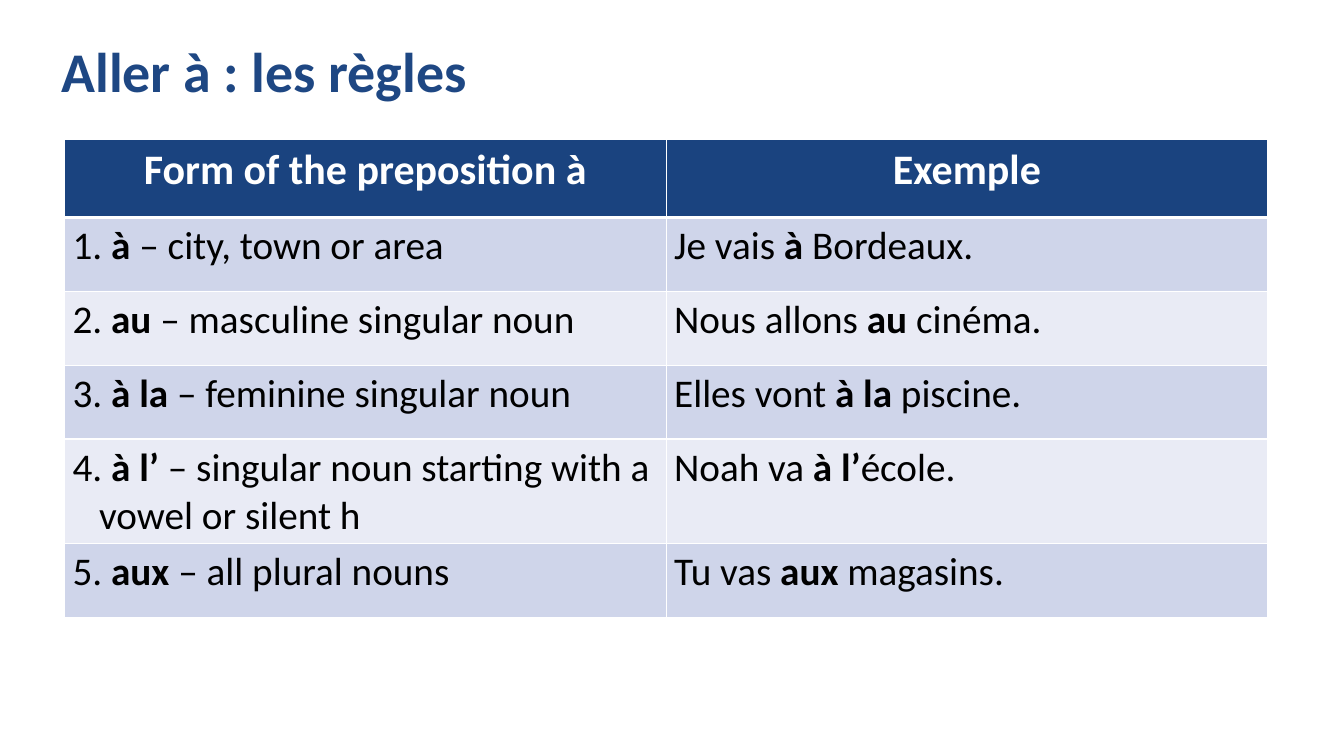
from dataclasses import dataclass

from lxml.etree import SubElement
from pptx import Presentation
from pptx.dml.color import RGBColor
from pptx.enum.text import MSO_ANCHOR, PP_ALIGN
from pptx.oxml.ns import qn
from pptx.util import Cm, Pt

FONT = "Calibri"
COLOURS = {
    "title": "1E4783",
    "header": "1A437F",
    "odd": "CFD5EA",
    "even": "E9EBF5",
    "text": "000000",
    "white": "FFFFFF",
}


@dataclass
class Rule:
    form: str
    use: str
    subject: str
    place: str


HEADINGS = ["Form of the preposition à", "Exemple"]
RULES = [
    Rule("à", "city, town or area", "Je vais", " Bordeaux."),
    Rule("au", "masculine singular noun", "Nous allons", " cinéma."),
    Rule("à la", "feminine singular noun", "Elles vont", " piscine."),
    Rule("à l’", "singular noun starting with a vowel or silent h", "Noah va", "école."),
    Rule("aux", "all plural nouns", "Tu vas", " magasins."),
]


def colour(name: str) -> RGBColor:
    return RGBColor.from_string(COLOURS[name])


def style(para, size: int, colour_name: str, bold: bool = False) -> None:
    font = para.font
    font.name, font.size, font.bold = FONT, Pt(size), bold
    font.color.rgb = colour(colour_name)


def add_border(cell, side: str, width: int) -> None:
    line = SubElement(cell._tc.get_or_add_tcPr(), qn(f"a:ln{side}"), w=str(Pt(width)))
    fill = SubElement(line, qn("a:solidFill"))
    SubElement(fill, qn("a:srgbClr"), val=COLOURS["white"])


def format_cell(cell, fill: str, top: int = 1, bottom: int = 1) -> None:
    cell.margin_left = cell.margin_right = Cm(0.2)
    cell.margin_top = cell.margin_bottom = Cm(0.13)
    for side, width in {"L": 1, "R": 1, "T": top, "B": bottom}.items():
        add_border(cell, side, width)
    cell.fill.solid()
    cell.fill.fore_color.rgb = colour(fill)


def write_rule(cell, before: str, form: str, after: str):
    para = cell.text_frame.paragraphs[0]
    for text in (before, form, after):
        span = para.add_run()
        span.text = text
        if text == form:
            span.font.bold = True
    style(para, 28, "text")
    return para


def add_title(page, text: str) -> None:
    box = page.shapes.add_textbox(Cm(1.3), Cm(1.02), Cm(29.21), Cm(1.73))
    frame = box.text_frame
    frame.word_wrap = True
    frame.vertical_anchor = MSO_ANCHOR.MIDDLE
    para = frame.paragraphs[0]
    para.text = text
    para.line_spacing = 0.9
    style(para, 40, "title", bold=True)


def add_rules_table(page) -> None:
    header_height, row_height = Cm(1.97), Cm(1.86)
    table = page.shapes.add_table(
        len(RULES) + 1, len(HEADINGS), Cm(1.63), Cm(3.51),
        Cm(30.32), header_height + row_height * len(RULES),
    ).table
    table.first_row = table.horz_banding = False

    # Header row
    table.rows[0].height = header_height
    for cell, heading in zip(table.rows[0].cells, HEADINGS):
        format_cell(cell, "header", bottom=3)
        para = cell.text_frame.paragraphs[0]
        para.text = heading
        para.alignment = PP_ALIGN.CENTER
        style(para, 30, "white", bold=True)

    # One banded row per rule
    for number, rule in enumerate(RULES, start=1):
        table.rows[number].height = row_height
        form_cell, example_cell = table.rows[number].cells
        for cell in (form_cell, example_cell):
            format_cell(cell, "odd" if number % 2 else "even", top=3 if number == 1 else 1)
        para = write_rule(form_cell, f"{number}. ", rule.form, f" – {rule.use}")
        write_rule(example_cell, f"{rule.subject} ", rule.form, rule.place)
        # Hanging indent for a wrapped rule
        properties = para._p.get_or_add_pPr()
        properties.set("marL", str(Cm(0.67)))
        properties.set("indent", str(-Cm(0.67)))


def main() -> None:
    deck = Presentation()
    deck.slide_width, deck.slide_height = Cm(33.87), Cm(19.05)
    page = deck.slides.add_slide(deck.slide_layouts[6])
    add_title(page, "Aller à : les règles")
    add_rules_table(page)
    deck.save("out.pptx")


if __name__ == "__main__":
    main()
